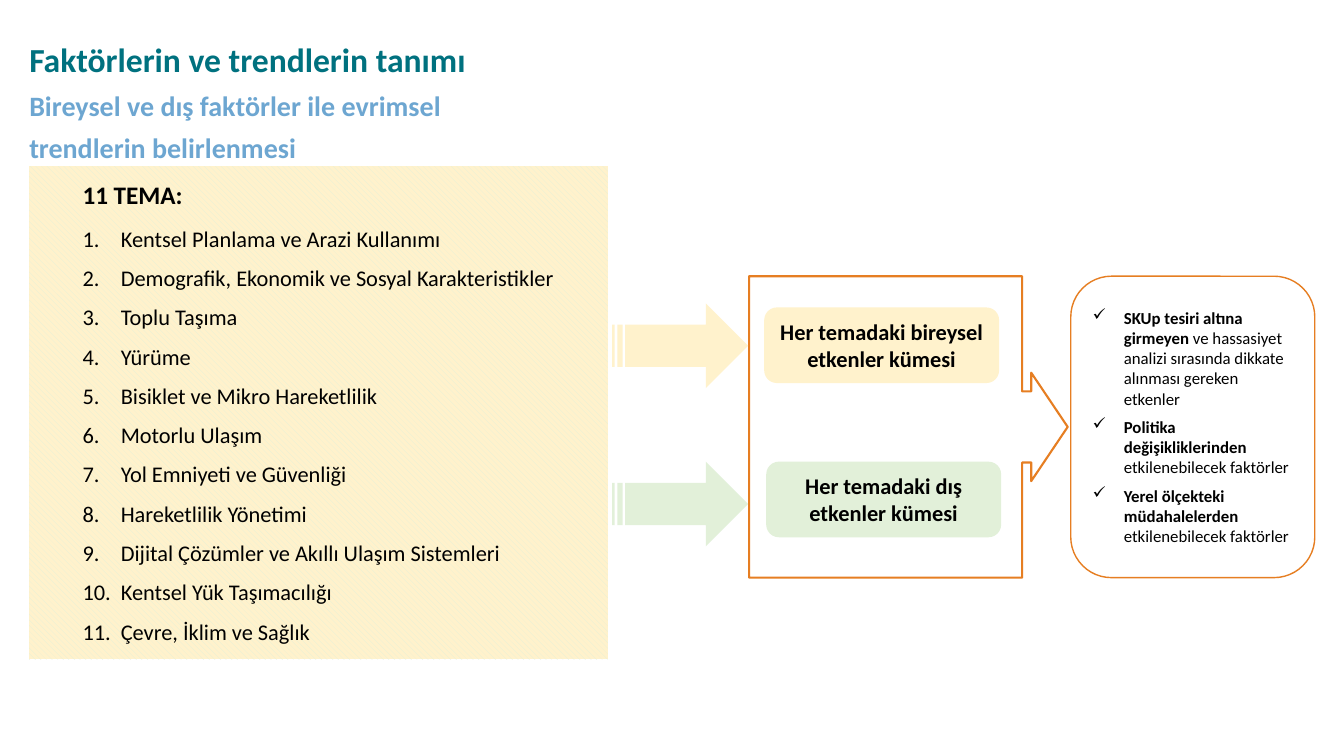
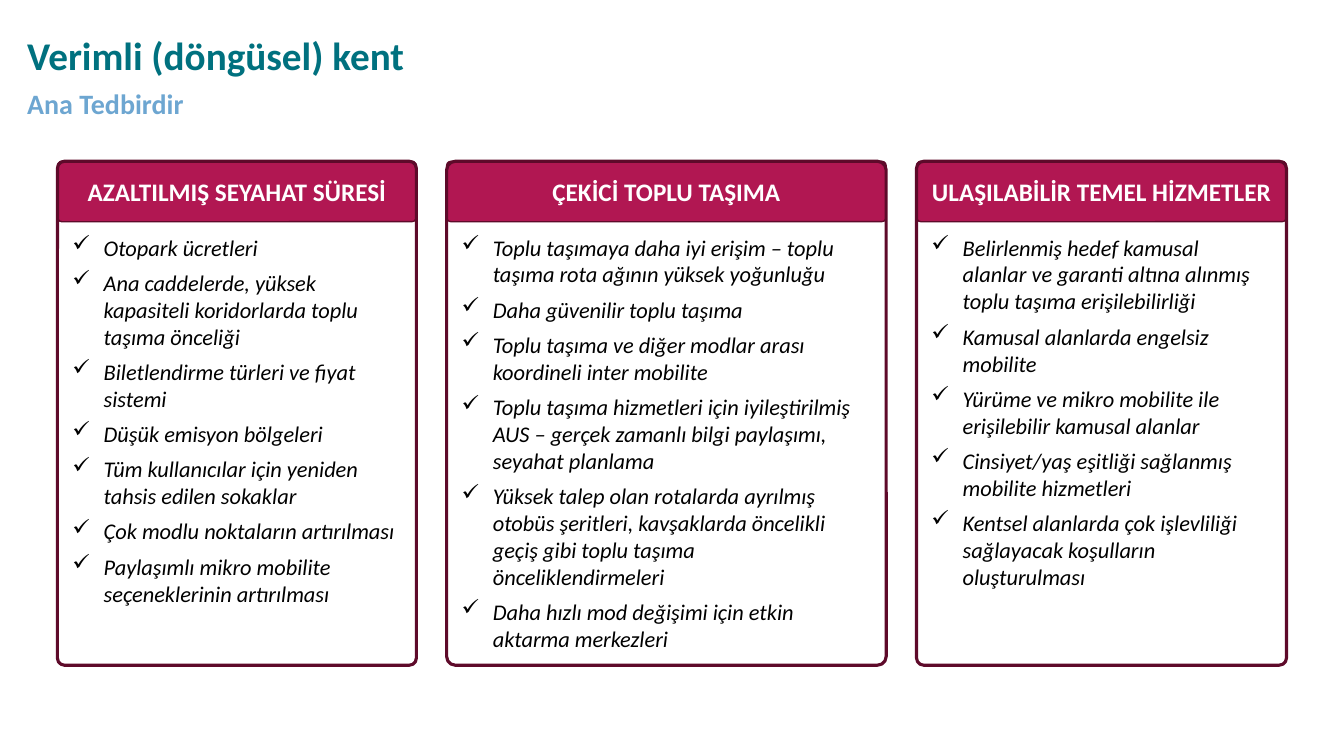
from pptx import Presentation
from pptx.dml.color import RGBColor
from pptx.enum.dml import MSO_PATTERN
from pptx.enum.shapes import MSO_SHAPE
from pptx.enum.text import MSO_ANCHOR, PP_ALIGN
from pptx.oxml.ns import qn
from pptx.util import Inches, Pt
from lxml import etree

ROUND = MSO_SHAPE.ROUNDED_RECTANGLE
STRIPED = MSO_SHAPE.STRIPED_RIGHT_ARROW
CALLOUT = MSO_SHAPE.RIGHT_ARROW_CALLOUT
PROCESS = MSO_SHAPE.FLOWCHART_PROCESS
DIAGONAL = MSO_PATTERN.WIDE_DOWNWARD_DIAGONAL
CENTER = PP_ALIGN.CENTER
JUSTIFY = PP_ALIGN.JUSTIFY
MIDDLE = MSO_ANCHOR.MIDDLE

FONT = "Calibri"
COLORS = {
    "title": "00717F",
    "subtitle": "6DA6D1",
    "text": "000000",
    "white": "FFFFFF",
    "cream": "FFF2CC",
    "green": "E2F0D9",
    "orange": "E67E22",
    "berry": "B11752",
    "wine": "5E0A2A",
}

THEMES = [
    "Kentsel Planlama ve Arazi Kullanımı",
    "Demografik, Ekonomik ve Sosyal Karakteristikler",
    "Toplu Taşıma",
    "Yürüme",
    "Bisiklet ve Mikro Hareketlilik",
    "Motorlu Ulaşım",
    "Yol Emniyeti ve Güvenliği",
    "Hareketlilik Yönetimi",
    "Dijital Çözümler ve Akıllı Ulaşım Sistemleri",
    "Kentsel Yük Taşımacılığı",
    "Çevre, İklim ve Sağlık",
]

FACTORS = [
    ("SKUp tesiri altına girmeyen ",
     "ve hassasiyet analizi sırasında dikkate alınması gereken etkenler"),
    ("Politika değişikliklerinden ", "etkilenebilecek faktörler"),
    ("Yerel ölçekteki müdahalelerden ", "etkilenebilecek faktörler"),
]

MEASURES = [
    ("AZALTILMIŞ SEYAHAT SÜRESİ", 3.56, [
        "Otopark ücretleri",
        "Ana caddelerde, yüksek kapasiteli koridorlarda toplu taşıma önceliği",
        "Biletlendirme türleri ve fiyat sistemi",
        "Düşük emisyon bölgeleri",
        "Tüm kullanıcılar için yeniden tahsis edilen sokaklar",
        "Çok modlu noktaların artırılması",
        "Paylaşımlı mikro mobilite seçeneklerinin artırılması",
    ]),
    ("ÇEKİCİ TOPLU TAŞIMA", 4.36, [
        "Toplu taşımaya daha iyi erişim – toplu taşıma rota ağının yüksek yoğunluğu",
        "Daha güvenilir toplu taşıma",
        "Toplu taşıma ve diğer modlar arası koordineli inter mobilite",
        "Toplu taşıma hizmetleri için iyileştirilmiş AUS – gerçek zamanlı bilgi "
        "paylaşımı, seyahat planlama",
        "Yüksek talep olan rotalarda ayrılmış otobüs şeritleri, kavşaklarda öncelikli "
        "geçiş gibi toplu taşıma önceliklendirmeleri",
        "Daha hızlı mod değişimi için etkin aktarma merkezleri",
    ]),
    ("ULAŞILABİLİR TEMEL HİZMETLER", 3.67, [
        "Belirlenmiş hedef kamusal alanlar ve garanti altına alınmış toplu taşıma "
        "erişilebilirliği",
        "Kamusal alanlarda engelsiz mobilite",
        "Yürüme ve mikro mobilite ile erişilebilir kamusal alanlar",
        "Cinsiyet/yaş eşitliği sağlanmış mobilite hizmetleri",
        "Kentsel alanlarda çok işlevliliği sağlayacak koşulların oluşturulması",
    ]),
]


def rgb(name):
    return RGBColor.from_string(COLORS[name])


def add_run(p, text, size, color="text", bold=False, italic=False):
    r = p.add_run()
    r.text = text
    r.font.name = FONT
    r.font.size = Pt(size)
    r.font.bold = bold
    r.font.italic = italic
    r.font.color.rgb = rgb(color)


def next_paragraph(tf):
    first = tf.paragraphs[0]
    return tf.add_paragraph() if first.runs else first


def add_item(tf, indent, tag, **attributes):
    p = next_paragraph(tf)
    p.space_after = Pt(6)
    pPr = p._p.get_or_add_pPr()
    pPr.set("marL", str(Inches(indent)))
    pPr.set("indent", str(-Inches(indent)))
    bullet = etree.SubElement(pPr, qn(tag))
    for key, value in attributes.items():
        bullet.set(key, value)
    return p


def add_check(tf):
    return add_item(tf, 0.31, "a:buChar", char="✓")


def add_text_box(s, x, y, w, h):
    tf = s.shapes.add_textbox(Inches(x), Inches(y), Inches(w), Inches(h)).text_frame
    tf.word_wrap = True
    return tf


def add_box(s, kind, x, y, w, h, fill=None, line=None, width=1, adj=()):
    sp = s.shapes.add_shape(kind, Inches(x), Inches(y), Inches(w), Inches(h))
    sp.shadow.inherit = False
    for i, value in enumerate(adj):
        sp.adjustments[i] = value
    if fill:
        sp.fill.solid()
        sp.fill.fore_color.rgb = rgb(fill)
    else:
        sp.fill.background()
    if line:
        sp.line.color.rgb = rgb(line)
        sp.line.width = Pt(width)
    else:
        sp.line.fill.background()
    return sp


def add_label(sp, text, size, color="text"):
    tf = sp.text_frame
    tf.word_wrap = True
    tf.vertical_anchor = MIDDLE
    p = tf.paragraphs[0]
    p.alignment = CENTER
    add_run(p, text, size, color, bold=True)


def add_title(s, x, y, w, size, title, subtitles):
    tf = add_text_box(s, x, y, w, 0.84)
    tf.margin_left = tf.margin_right = tf.margin_top = tf.margin_bottom = 0
    add_run(tf.paragraphs[0], title, size, "title", bold=True)
    for subtitle in subtitles:
        p = tf.add_paragraph()
        p.space_before = Pt(6)
        add_run(p, subtitle, 20, "subtitle", bold=True)


def add_theme_list(s):
    panel = add_box(s, PROCESS, 0.29, 1.65, 5.74, 4.89)
    panel.fill.patterned()
    panel.fill.pattern = DIAGONAL
    panel.fill.fore_color.rgb = rgb("green")
    panel.fill.back_color.rgb = rgb("cream")
    tf = add_text_box(s, 0.72, 1.71, 4.95, 4.77)
    p = tf.paragraphs[0]
    p.line_spacing = 1.07
    p.space_after = Pt(8)
    add_run(p, "11 TEMA:", 18, bold=True)
    for theme in THEMES:
        p = add_item(tf, 0.38, "a:buAutoNum", type="arabicPeriod")
        p.alignment = JUSTIFY
        p.line_spacing = 1.15
        add_run(p, theme, 16)


def add_factor_box(s):
    sp = add_box(s, ROUND, 10.62, 2.74, 2.42, 2.99, line="orange")
    tf = sp.text_frame
    tf.word_wrap = True
    tf.vertical_anchor = MIDDLE
    for strong, rest in FACTORS:
        p = add_check(tf)
        p.alignment = PP_ALIGN.LEFT
        add_run(p, strong, 12, bold=True)
        add_run(p, rest, 12)


def add_measure_column(s, x, w, heading, items):
    top = 1.6
    header = add_box(s, ROUND, x, top, w, 0.6, "berry", "wine", adj=[0.075])
    add_label(header, heading, 18, "white")
    tf = add_text_box(s, x + 0.05, top + 0.67, w - 0.14, 4.3)
    for item in items:
        add_run(add_check(tf), item, 16, italic=True)
    add_box(s, ROUND, x, top, w, 5, line="wine", width=2.25, adj=[0.02])


def build_factors(s):
    add_box(s, CALLOUT, 7.43, 2.74, 3.16, 2.99, line="orange", width=1.5,
            adj=[0.236, 0.18, 0.121, 0.857])
    add_title(s, 0.29, 0.39, 10.48, 24, "Faktörlerin ve trendlerin tanımı",
              ["Bireysel ve dış faktörler ile evrimsel", "trendlerin belirlenmesi"])
    add_theme_list(s)
    for color, arrow_y, x, y, text in (
        ("cream", 3.01, 7.58, 3.05, "Her temadaki bireysel etkenler kümesi"),
        ("green", 4.58, 7.6, 4.58, "Her temadaki dış etkenler kümesi"),
    ):
        add_box(s, STRIPED, 6.07, arrow_y, 1.35, 0.84, color)
        add_label(add_box(s, ROUND, x, y, 2.33, 0.75, color), text, 16)
    add_factor_box(s)


def build_measures(s):
    add_title(s, 0.27, 0.31, 9.4, 28, "Verimli (döngüsel) kent", ["Ana Tedbirdir"])
    x, gap = 0.57, 0.3
    for heading, w, items in MEASURES:
        add_measure_column(s, x, w, heading, items)
        x += w + gap


def main():
    prs = Presentation()
    prs.slide_width = Inches(13.33)
    prs.slide_height = Inches(7.5)
    for build in (build_factors, build_measures):
        build(prs.slides.add_slide(prs.slide_layouts[6]))
    prs.save("out.pptx")


if __name__ == "__main__":
    main()
